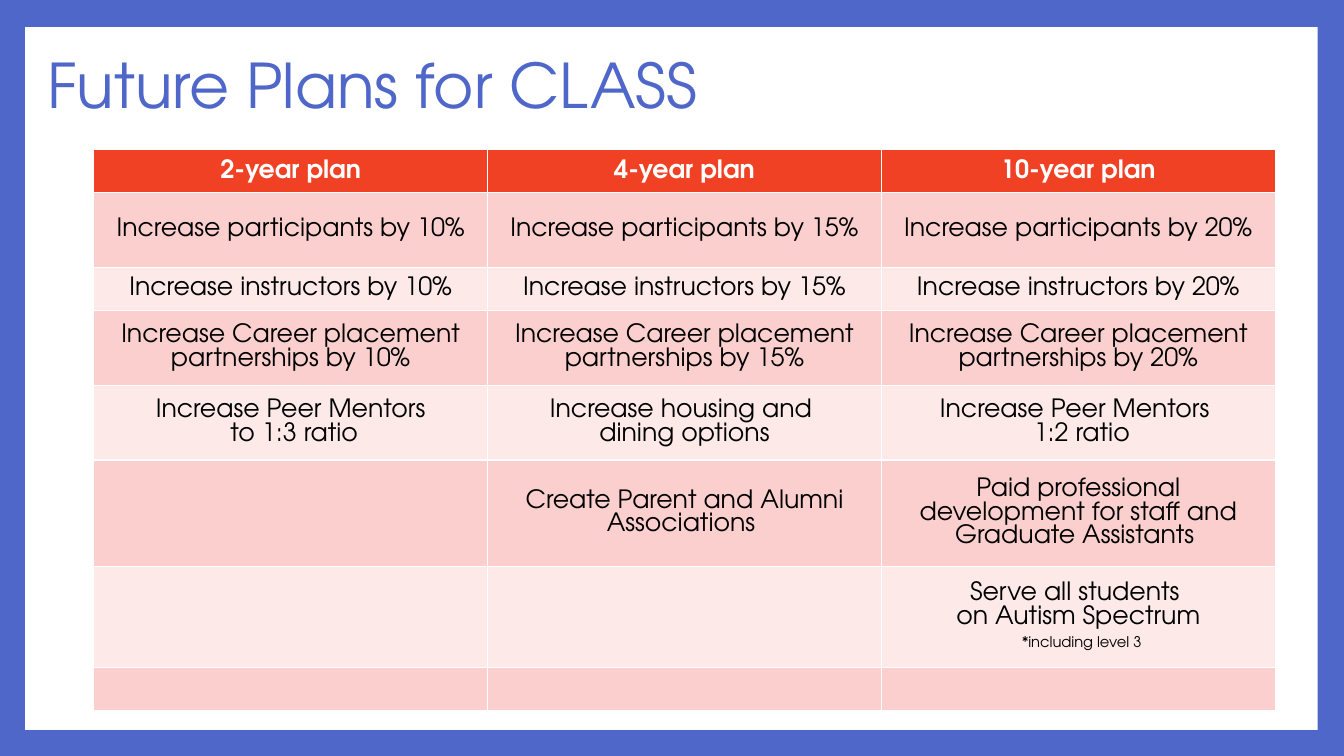
from pptx import Presentation
from pptx.dml.color import RGBColor
from pptx.enum.shapes import MSO_SHAPE
from pptx.enum.text import MSO_ANCHOR, PP_ALIGN
from pptx.util import Pt

RECT = MSO_SHAPE.RECTANGLE
MIDDLE = MSO_ANCHOR.MIDDLE
CENTER = PP_ALIGN.CENTER
FONT = "TeX Gyre Adventor"
COLORS = {
    "blue": "4E67C8",
    "white": "FFFFFF",
    "header": "F14124",
    "odd": "FACFCD",
    "even": "FCE9E8",
    "text": "000000",
}


def rgb(name):
    return RGBColor.from_string(COLORS[name])


def set_font(font, size, color, bold=False):
    font.name = FONT
    font.size = Pt(size)
    font.bold = bold
    font.color.rgb = rgb(color)


prs = Presentation()
prs.slide_width = Pt(960)
prs.slide_height = Pt(540)
slide = prs.slides.add_slide(prs.slide_layouts[6])
slide.background.fill.solid()
slide.background.fill.fore_color.rgb = rgb("blue")

# White page inside the blue frame
sp = slide.shapes.add_shape(RECT, Pt(18), Pt(19.3), Pt(923.3), Pt(502))
sp.shadow.inherit = False
sp.fill.solid()
sp.fill.fore_color.rgb = rgb("white")
sp.line.fill.background()

# Title
title = slide.shapes.add_textbox(Pt(26.9), Pt(10), Pt(777.6), Pt(106.5))
tf = title.text_frame
tf.word_wrap = True
tf.vertical_anchor = MIDDLE
p = tf.paragraphs[0]
p.text = "Future Plans for CLASS"
p.line_spacing = 0.9
set_font(p.font, 44, "blue")

# Plans table: a line break in a cell starts a new paragraph
goals = (
    "Increase participants by {}%",
    "Increase instructors by {}%",
    "Increase Career placement partnerships by {}%",
)
rows = [["2-year plan", "4-year plan", "10-year plan"]]
rows += [[goal.format(percent) for percent in (10, 15, 20)] for goal in goals]
rows += [
    ["Increase Peer Mentors\n to 1:3 ratio",
     "Increase housing and \ndining options",
     "Increase Peer Mentors \n 1:2 ratio"],
    ["", "Create Parent and Alumni Associations ",
     "Paid professional development for staff and Graduate Assistants "],
    ["", "", "Serve all students \non Autism Spectrum\n "],
    ["", "", ""],
]
row_heights = [30.8, 53.4, 30.8, 53.4, 53.4, 76.3, 53.4, 30.8]

frame = slide.shapes.add_table(len(rows), 3, Pt(67), Pt(106.8), Pt(843.9), Pt(sum(row_heights)))
table = frame.table
for column in table.columns:
    column.width = Pt(281.3)

for i, (texts, height) in enumerate(zip(rows, row_heights)):
    table.rows[i].height = Pt(height)
    if i == 0:
        fill, color = "header", "white"
    else:
        fill, color = ("odd" if i % 2 else "even"), "text"
    for j, text in enumerate(texts):
        cell = table.cell(i, j)
        cell.fill.solid()
        cell.fill.fore_color.rgb = rgb(fill)
        cell.vertical_anchor = MIDDLE
        cell.text = text
        for p in cell.text_frame.paragraphs:
            p.alignment = CENTER
            set_font(p.font, 18, color, bold=i == 0)

# Small remark under the last goal of the 10-year plan
r = table.cell(6, 2).text_frame.paragraphs[-1].add_run()
r.text = "*including level 3"
r.font.size = Pt(10.5)

prs.save("out.pptx")
